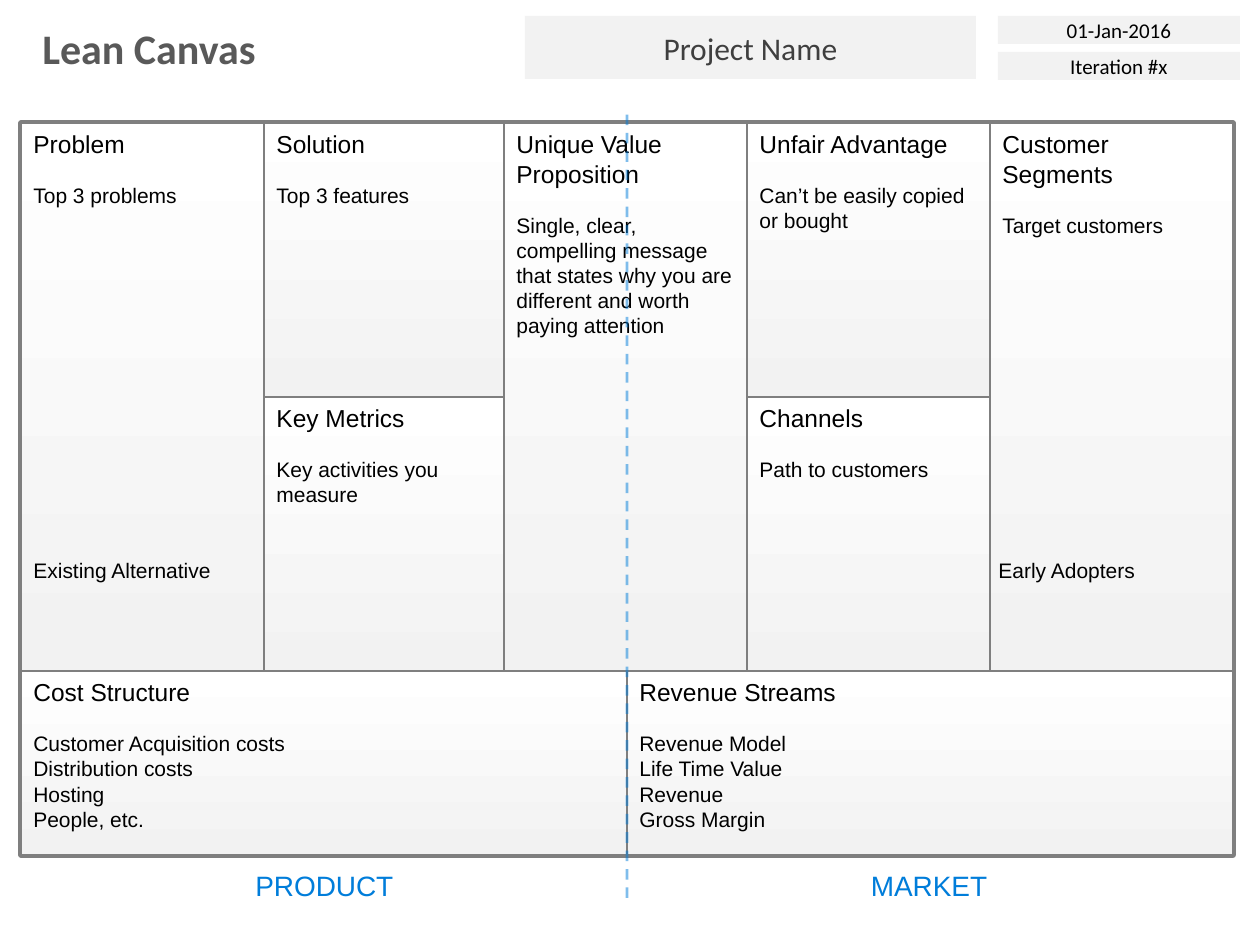
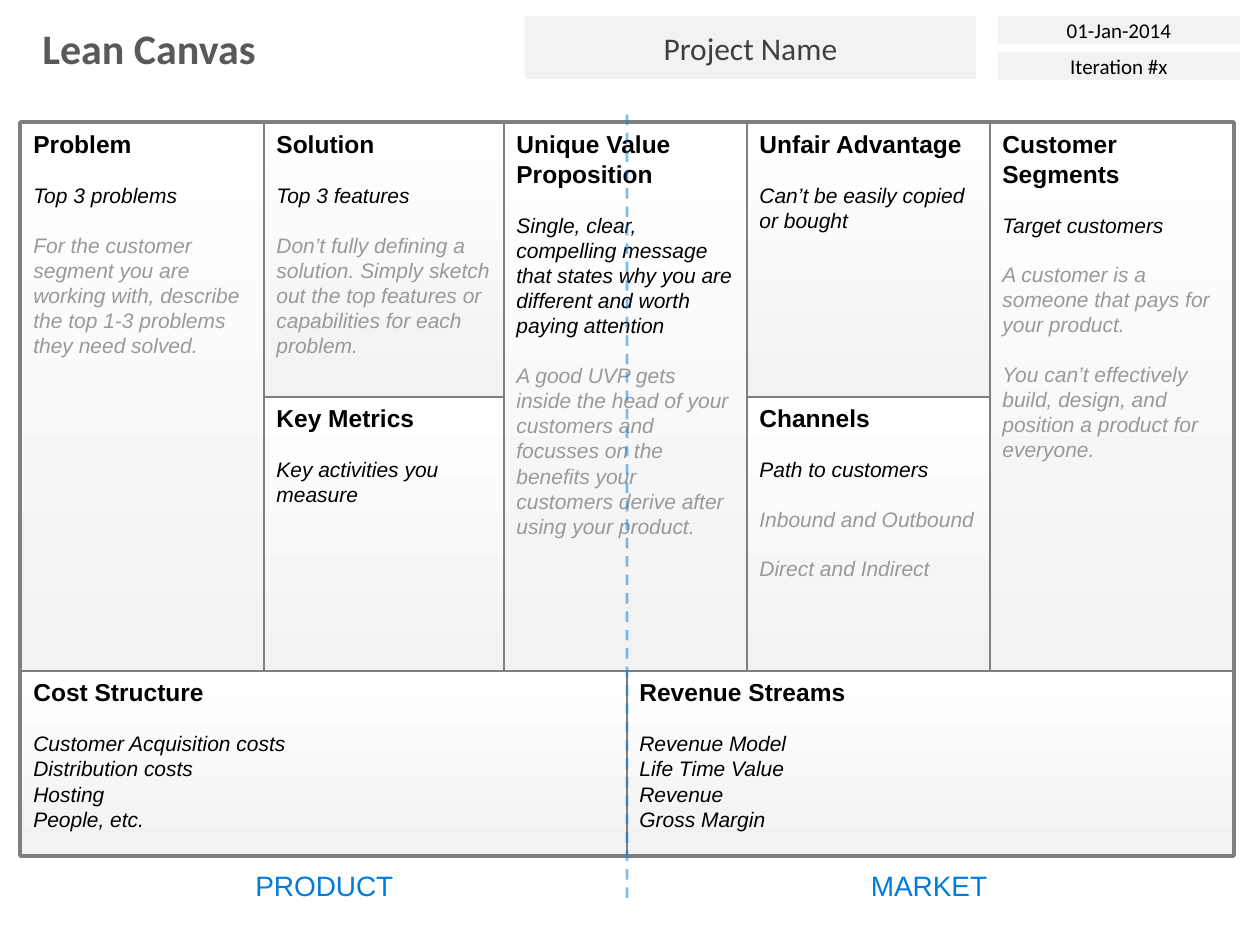
from lxml import etree
from pptx import Presentation
from pptx.dml.color import RGBColor
from pptx.enum.dml import MSO_LINE
from pptx.enum.shapes import MSO_CONNECTOR, MSO_SHAPE
from pptx.enum.text import MSO_ANCHOR as ANCHOR, PP_ALIGN as ALIGN
from pptx.oxml.ns import qn
from pptx.util import Emu, Pt

SCALE = 914400 / 126  # EMU in one px
COLORS = {
    "title": "595959", "project": "3F3F3F", "text": "000000", "hint": "999999",
    "band": "F2F2F2", "white": "FFFFFF", "border": "7F7F7F", "accent": "007DDA",
}
RGB = {name: RGBColor.from_string(value) for name, value in COLORS.items()}
HEAD_SIZE, BODY_SIZE = 14, 12
BLANK_LINE = 13.8  # points, one line of body text


def write(box, text, size=BODY_SIZE, font="Arial", color="text", bold=False,
          italic=False, align=ALIGN.LEFT, gap=0):
    """Add one paragraph to a box, filling its empty first paragraph if it can."""
    frame = box.text_frame
    para = frame.add_paragraph() if frame.text else frame.paragraphs[0]
    para.alignment = align
    para.space_before = Pt(gap)
    span = para.add_run()
    span.text = text
    span.font.name, span.font.size = font, Pt(size)
    span.font.bold, span.font.italic = bold, italic
    span.font.color.rgb = RGB[color]


def add_box(page, area, kind=None, fill=None, border=0, anchor=ANCHOR.TOP, wrap=True):
    """Add a text box, or a shape of the given kind; area is in px."""
    place = [Emu(round(value * SCALE)) for value in area]
    if kind is None:
        box = page.shapes.add_textbox(*place)
    else:
        box = page.shapes.add_shape(kind, *place)
        box.shadow.inherit = False
        if kind == MSO_SHAPE.ROUNDED_RECTANGLE:
            box.adjustments[0] = 0
        if fill == "gradient":
            box.fill.gradient()
            box.fill.gradient_angle = 90
            for stop, color in zip(box.fill.gradient_stops, ("band", "white")):
                stop.color.rgb = RGB[color]
        elif fill:
            box.fill.solid()
            box.fill.fore_color.rgb = RGB[fill]
        else:
            box.fill.background()
        if border:
            box.line.color.rgb = RGB["border"]
            box.line.width = Pt(border)
        else:
            box.line.fill.background()
    box.text_frame.word_wrap = wrap
    box.text_frame.vertical_anchor = anchor
    return box


# Canvas grid
LEFT, TOP, WIDTH = 21, 123, 1212
COLUMN, HALF, FOOT = 243, 274, 184
TALL = 2 * HALF
MIDDLE, BASE = LEFT + WIDTH // 2, TOP + TALL
PROBLEM, SOLUTION = LEFT, LEFT + COLUMN
CUSTOMER = LEFT + WIDTH - COLUMN
ADVANTAGE, VALUE = CUSTOMER - COLUMN, CUSTOMER - 2 * COLUMN

# Cells: heading, area, prompts, hints for the guided version
CELLS = [
    ("Cost Structure", (LEFT, BASE, WIDTH // 2, FOOT),
     ["Customer Acquisition costs", "Distribution costs", "Hosting", "People, etc."], []),
    ("Revenue Streams", (MIDDLE, BASE, WIDTH // 2, FOOT),
     ["Revenue Model", "Life Time Value", "Revenue", "Gross Margin"], []),
    ("Problem", (PROBLEM, TOP, COLUMN, TALL), ["Top 3 problems"],
     ["For the customer segment you are working with, describe the top 1-3 problems "
      "they need solved."]),
    ("Solution", (SOLUTION, TOP, COLUMN, HALF), ["Top 3 features"],
     ["Don’t fully defining a solution. Simply sketch out the top features or "
      "capabilities for each problem."]),
    ("Key Metrics", (SOLUTION, TOP + HALF, COLUMN, HALF),
     ["Key activities you measure"], []),
    ("Unique Value Proposition", (VALUE, TOP, COLUMN, TALL),
     ["Single, clear, compelling message that states why you are different and worth "
      "paying attention"],
     ["A good UVP gets inside the head of your customers and focusses on the benefits "
      "your customers derive after using your product."]),
    ("Unfair Advantage", (ADVANTAGE, TOP, COLUMN, HALF),
     ["Can’t be easily copied or bought"], []),
    ("Channels", (ADVANTAGE, TOP + HALF, COLUMN, HALF), ["Path to customers"],
     ["Inbound and Outbound", "Direct and Indirect"]),
    ("Customer Segments", (CUSTOMER, TOP, COLUMN, TALL), ["Target customers"],
     ["A customer is a someone that pays for your product.",
      "You can’t effectively build, design, and position a product for everyone."]),
]

# Slides: date, guided version or not, extra notes with their left edge
SLIDES = [
    ("01-Jan-2016", False, [("Existing Alternative", PROBLEM),
                            ("Early Adopters", CUSTOMER - 4)]),
    ("01-Jan-2014", True, []),
]

deck = Presentation()
deck.slide_width, deck.slide_height = Emu(round(1260 * SCALE)), Emu(round(945 * SCALE))

for date, guided, notes in SLIDES:
    page = deck.slides.add_slide(deck.slide_layouts[6])

    # Title and outer frame
    title = add_box(page, (30, 16, 242, 63))
    write(title, "Lean Canvas", size=24, font="Calibri", color="title", bold=True)
    add_box(page, (LEFT, TOP, WIDTH, TALL + FOOT), MSO_SHAPE.ROUNDED_RECTANGLE, border=3)

    # Header bands
    for text, area, size, color in [
        ("Project Name", (525, 16, 451, 63), 18, "project"),
        (date, (998, 16, 242, 28), 12, "text"),
        ("Iteration #x", (998, 52, 242, 28), 12, "text"),
    ]:
        band = add_box(page, area, MSO_SHAPE.RECTANGLE, fill="band", anchor=ANCHOR.MIDDLE)
        write(band, text, size=size, font="Calibri", color=color, align=ALIGN.CENTER)

    # Canvas cells
    for heading, area, prompts, hints in CELLS:
        cell = add_box(page, area, MSO_SHAPE.ROUNDED_RECTANGLE, fill="gradient", border=1.5)
        write(cell, heading, size=HEAD_SIZE, bold=guided)
        for index, prompt in enumerate(prompts):
            write(cell, prompt, italic=guided, gap=0 if index else BLANK_LINE)
        for hint in hints if guided else []:
            write(cell, hint, color="hint", italic=True, gap=BLANK_LINE)

    # Side labels
    for text, left, width in [("PRODUCT", 242, 165), ("MARKET", 858, 142)]:
        label = add_box(page, (left, 862, width, 47), wrap=False)
        write(label, text, size=16, color="accent", align=ALIGN.CENTER)

    # Half-transparent dashed divider
    ends = [Emu(round(value * SCALE)) for value in (MIDDLE, 898, MIDDLE, 108)]
    divider = page.shapes.add_connector(MSO_CONNECTOR.STRAIGHT, *ends)
    divider.line.color.rgb = RGB["accent"]
    divider.line.width = Pt(1.5)
    divider.line.dash_style = MSO_LINE.DASH
    properties = divider._element.spPr
    tint = properties.find(".//" + qn("a:srgbClr"))
    etree.SubElement(tint, qn("a:alpha")).set("val", "50000")
    etree.SubElement(properties, qn("a:effectLst"))

    # Extra notes
    for text, left in notes:
        note = add_box(page, (left, 551, COLUMN, 120))
        write(note, text)

deck.save("out.pptx")
